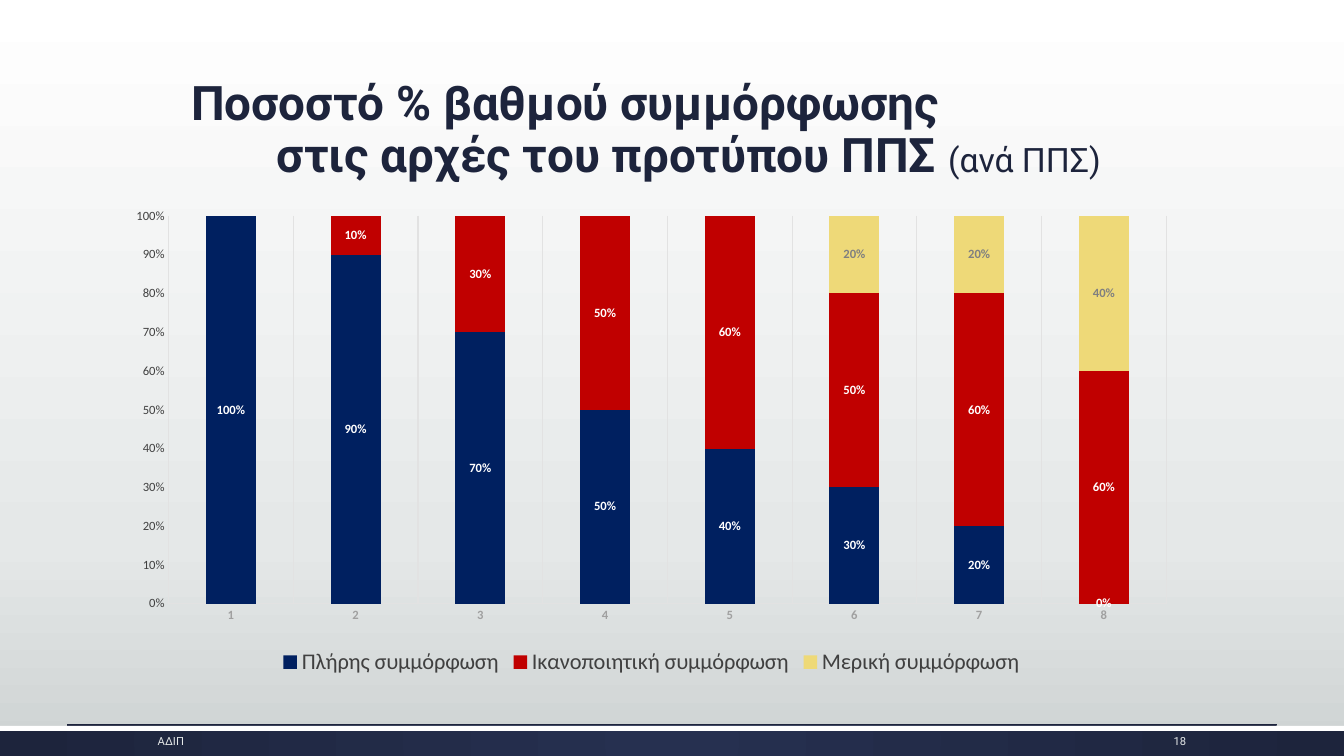
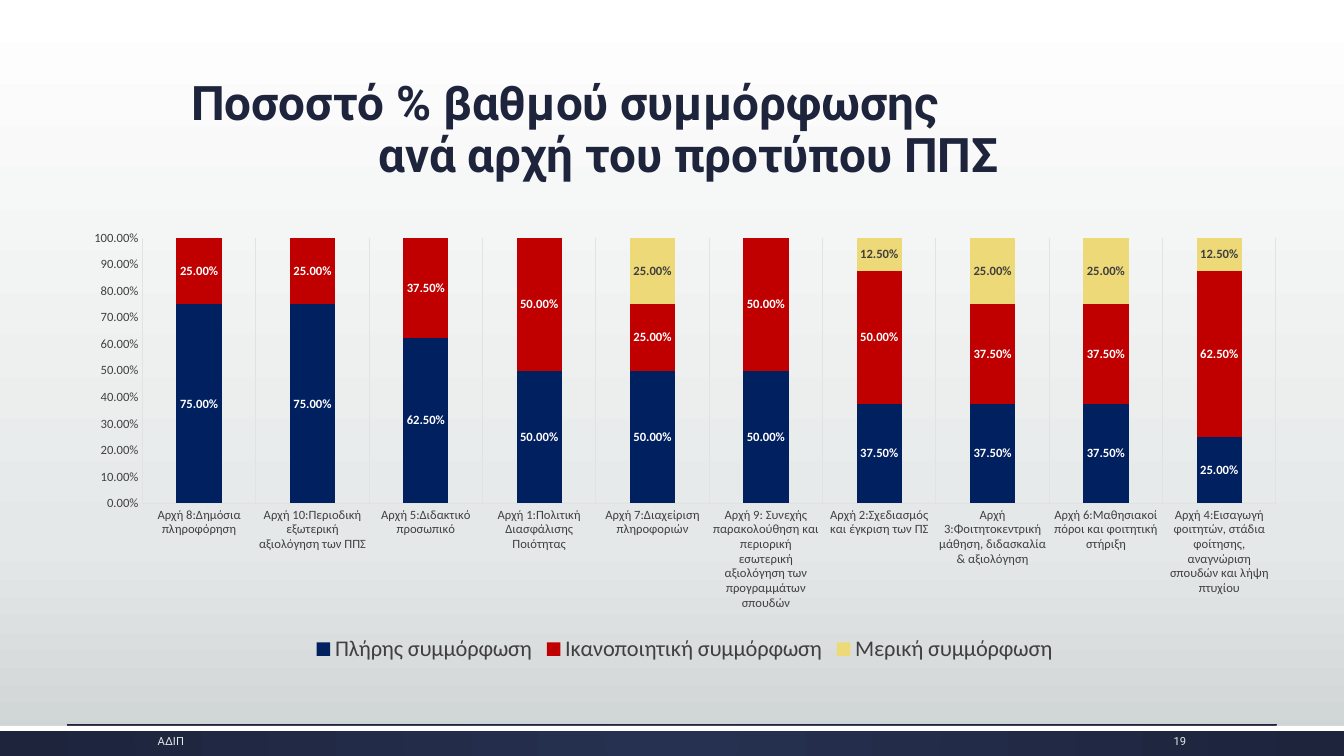
from pptx import Presentation
from pptx.chart.data import CategoryChartData
from pptx.dml.color import RGBColor
from pptx.enum.chart import XL_CHART_TYPE, XL_LABEL_POSITION, XL_LEGEND_POSITION, XL_TICK_MARK
from pptx.enum.shapes import MSO_CONNECTOR, MSO_SHAPE
from pptx.enum.text import MSO_ANCHOR, PP_ALIGN
from pptx.oxml import parse_xml
from pptx.oxml.ns import nsdecls, qn
from pptx.util import Inches, Pt

STACKED = XL_CHART_TYPE.COLUMN_STACKED
CENTER_LABEL = XL_LABEL_POSITION.CENTER
LEGEND_BOTTOM = XL_LEGEND_POSITION.BOTTOM
NO_TICK = XL_TICK_MARK.NONE
STRAIGHT = MSO_CONNECTOR.STRAIGHT
RECT = MSO_SHAPE.RECTANGLE
MIDDLE, BOTTOM = MSO_ANCHOR.MIDDLE, MSO_ANCHOR.BOTTOM
LEFT, CENTER, RIGHT = PP_ALIGN.LEFT, PP_ALIGN.CENTER, PP_ALIGN.RIGHT

WHITE = RGBColor(0xFF, 0xFF, 0xFF)
MIST = RGBColor(0xE5, 0xE8, 0xE8)
SILVER = RGBColor(0xCD, 0xD2, 0xD2)
INDIGO = RGBColor(0x26, 0x30, 0x50)
INK = RGBColor(0x1D, 0x24, 0x3C)
TEXT = RGBColor(0x40, 0x40, 0x40)
GRAY = RGBColor(0x80, 0x80, 0x80)
PALE_GRAY = RGBColor(0xA0, 0xA0, 0xA0)
GRID = RGBColor(0xE2, 0xE2, 0xE2)
NAVY = RGBColor(0x00, 0x20, 0x60)
RED = RGBColor(0xC0, 0x00, 0x00)
SAND = RGBColor(0xEE, 0xD9, 0x78)

HEAD_FONT, CHART_FONT = "Roboto", "Calibri"
W, H = Inches(13.33), Inches(7.5)
MARGIN = int(W * 0.11)
BAND_TOP = int(H * 0.96)
LEVELS = [("Πλήρης συμμόρφωση", NAVY), ("Ικανοποιητική συμμόρφωση", RED),
          ("Μερική συμμόρφωση", SAND)]

SLIDES = [
    {
        "title": ["Ποσοστό % βαθμού συμμόρφωσης", "στις αρχές του προτύπου ΠΠΣ "],
        "suffix": "(ανά ΠΠΣ)",
        "box": (1.14, 2, 10.64, 4.75),
        "plot": {"x": 0.05, "y": 0.03, "w": 0.93, "h": 0.81},
        "format": "0%",
        "cat_font": {"size": Pt(9), "bold": True},
        "cat_color": PALE_GRAY,
        "label_colors": [WHITE, WHITE, GRAY],
        "cats": [str(n) for n in range(1, 9)],
        "values": [
            [1, 0.9, 0.7, 0.5, 0.4, 0.3, 0.2, 0],
            [0, 0.1, 0.3, 0.5, 0.6, 0.5, 0.6, 0.6],
            [0, 0, 0, 0, 0, 0.2, 0.2, 0.4],
        ],
    },
    {
        "title": ["Ποσοστό % βαθμού συμμόρφωσης", "ανά αρχή του προτύπου ΠΠΣ"],
        "suffix": "",
        "box": (0.68, 2.23, 12.22, 4.39),
        "plot": {"x": 0.06, "y": 0.03, "w": 0.92, "h": 0.6},
        "format": "0.00%",
        "cat_font": {"size": Pt(9), "bold": False},
        "cat_color": TEXT,
        "label_colors": [WHITE, WHITE, TEXT],
        "cats": [
            "Αρχή 8:Δημόσια πληροφόρηση",
            "Αρχή 10:Περιοδική εξωτερική αξιολόγηση των ΠΠΣ",
            "Αρχή 5:Διδακτικό προσωπικό",
            "Αρχή 1:Πολιτική Διασφάλισης Ποιότητας",
            "Αρχή 7:Διαχείριση πληροφοριών",
            "Αρχή 9: Συνεχής παρακολούθηση και περιορική εσωτερική αξιολόγηση "
            "των προγραμμάτων σπουδών",
            "Αρχή 2:Σχεδιασμός και έγκριση των ΠΣ",
            "Αρχή 3:Φοιτητοκεντρική μάθηση, διδασκαλία & αξιολόγηση",
            "Αρχή 6:Μαθησιακοί πόροι και φοιτητική στήριξη",
            "Αρχή 4:Εισαγωγή φοιτητών, στάδια φοίτησης, αναγνώριση σπουδών "
            "και λήψη πτυχίου",
        ],
        "values": [
            [0.75, 0.75, 0.625, 0.5, 0.5, 0.5, 0.375, 0.375, 0.375, 0.25],
            [0.25, 0.25, 0.375, 0.5, 0.25, 0.5, 0.5, 0.375, 0.375, 0.625],
            [0, 0, 0, 0, 0.25, 0, 0.125, 0.25, 0.25, 0.125],
        ],
    },
]


def set_font(font, color, **values):
    font.color.rgb = color
    for name, value in values.items():
        setattr(font, name, value)


def set_gradient(props, stops, direction):
    """Replace the solid fill in props by a gradient with any number of stops."""
    stop_xml = "".join(f'<a:gs pos="{pos * 1000}"><a:srgbClr val="{color}"/></a:gs>'
                       for pos, color in stops)
    fill = parse_xml(f'<a:gradFill {nsdecls("a")} rotWithShape="1">'
                     f'<a:gsLst>{stop_xml}</a:gsLst>{direction}</a:gradFill>')
    props.replace(props.find(qn("a:solidFill")), fill)


prs = Presentation()
prs.slide_width, prs.slide_height = W, H
master, layout = prs.slide_master, prs.slide_layouts[5]
slides = [prs.slides.add_slide(layout) for _ in SLIDES]

# Shared background, title place and bottom band
master.background.fill.solid()
master.background.fill.fore_color.rgb = WHITE
set_gradient(master.element.find(".//" + qn("p:bgPr")),
             [(0, WHITE), (72, MIST), (100, SILVER)], '<a:lin ang="5400000" scaled="0"/>')

title = layout.placeholders[0]
title.left, title.top = MARGIN, Inches(0.51)
title.width, title.height = W - 2 * MARGIN, Inches(1.35)

shapes = slides[0].shapes
band = shapes.add_shape(RECT, 0, BAND_TOP, W, H - BAND_TOP)
stripe = shapes.add_shape(RECT, 0, BAND_TOP, W, Inches(0.05))
for sp, color in ((band, INDIGO), (stripe, WHITE)):
    sp.shadow.inherit = False
    sp.fill.solid()
    sp.fill.fore_color.rgb = color
    sp.line.fill.background()
set_gradient(band.element.spPr, [(0, INDIGO), (100, INK)],
             '<a:path path="circle"><a:fillToRect l="50000" t="50000" r="50000" b="50000"/></a:path>')

rule_y = BAND_TOP - Inches(0.01)
rule = shapes.add_connector(STRAIGHT, int(W * 0.05), rule_y, int(W * 0.95), rule_y)
rule.line.color.rgb = INK
rule.line.width = Pt(0.75)
rule.element.spPr.append(parse_xml(f'<a:effectLst {nsdecls("a")}/>'))
for sp in (band, stripe, rule):
    master.shapes.element.append(sp.element)

for number, (s, data) in enumerate(zip(slides, SLIDES), start=18):
    # Title: the first line is indented, the second centred
    tf = s.shapes.title.text_frame
    tf.vertical_anchor = BOTTOM
    tf.word_wrap = True
    tf.text = "\n".join(data["title"])
    for p, align in zip(tf.paragraphs, (LEFT, CENTER)):
        p.alignment = align
        p.line_spacing = 0.9
        set_font(p.runs[0].font, INK, name=HEAD_FONT, size=Pt(34), bold=True)
    tf.paragraphs[0]._p.get_or_add_pPr().set("marL", str(Inches(0.33)))
    if data["suffix"]:
        r = tf.paragraphs[1].add_run()
        r.text = data["suffix"]
        set_font(r.font, INK, name=HEAD_FONT, size=Pt(24), bold=False)

    # Footer
    number_width = Inches(0.7)
    for text, left, width, align in (
            ("ΑΔΙΠ", MARGIN, Inches(7.83), LEFT),
            (str(number), W - MARGIN - number_width, number_width, RIGHT)):
        tf = s.shapes.add_textbox(left, Inches(7.22), width, Inches(0.26)).text_frame
        tf.word_wrap = True
        tf.vertical_anchor = MIDDLE
        p = tf.paragraphs[0]
        p.alignment = align
        r = p.add_run()
        r.text = text
        set_font(r.font, MIST, name=HEAD_FONT, size=Pt(8))

    # Chart
    chart_data = CategoryChartData(number_format=data["format"])
    chart_data.categories = data["cats"]
    for (name, _), values in zip(LEVELS, data["values"]):
        chart_data.add_series(name, values)
    box = [Inches(v) for v in data["box"]]
    chart = s.shapes.add_chart(STACKED, *box, chart_data).chart
    set_font(chart.font, TEXT, name=CHART_FONT, size=Pt(10))
    chart.has_title = False
    chart.has_legend = True
    chart.legend.position = LEGEND_BOTTOM
    chart.legend.include_in_layout = False
    set_font(chart.legend.font, TEXT, name=CHART_FONT, size=Pt(16))

    cat_axis, val_axis = chart.category_axis, chart.value_axis
    for axis in (cat_axis, val_axis):
        axis.major_tick_mark = axis.minor_tick_mark = NO_TICK
    cat_axis.has_major_gridlines = True
    for line in (cat_axis.format.line, cat_axis.major_gridlines.format.line):
        line.color.rgb = GRID
        line.width = Pt(0.75)
    set_font(cat_axis.tick_labels.font, data["cat_color"], name=CHART_FONT, **data["cat_font"])
    val_axis.has_major_gridlines = False
    val_axis.format.line.fill.background()
    val_axis.minimum_scale, val_axis.maximum_scale, val_axis.major_unit = 0, 1, 0.1
    val_axis.tick_labels.number_format = data["format"]
    val_axis.tick_labels.number_format_is_linked = False
    set_font(val_axis.tick_labels.font, TEXT, name=CHART_FONT, size=Pt(9))

    plot = chart.plots[0]
    plot.gap_width, plot.overlap = 150, 100
    plot.vary_by_categories = False
    for i, (series, label_color) in enumerate(zip(plot.series, data["label_colors"])):
        series.format.fill.solid()
        series.format.fill.fore_color.rgb = LEVELS[i][1]
        labels = series.data_labels
        labels.show_value = True
        labels.position = CENTER_LABEL
        # Only the first series shows its zeros
        labels.number_format = data["format"] + (";;" if i else "")
        labels.number_format_is_linked = False
        set_font(labels.font, label_color, name=CHART_FONT, size=Pt(9), bold=True)

    area = chart.element.find(".//" + qn("c:plotArea"))
    for old in area.findall(qn("c:layout")):
        area.remove(old)
    sizes = "".join(f'<c:{key} val="{value}"/>' for key, value in data["plot"].items())
    area.insert(0, parse_xml(
        f'<c:layout {nsdecls("c")}><c:manualLayout><c:layoutTarget val="inner"/>'
        f'<c:xMode val="edge"/><c:yMode val="edge"/>{sizes}</c:manualLayout></c:layout>'))

prs.save("out.pptx")
